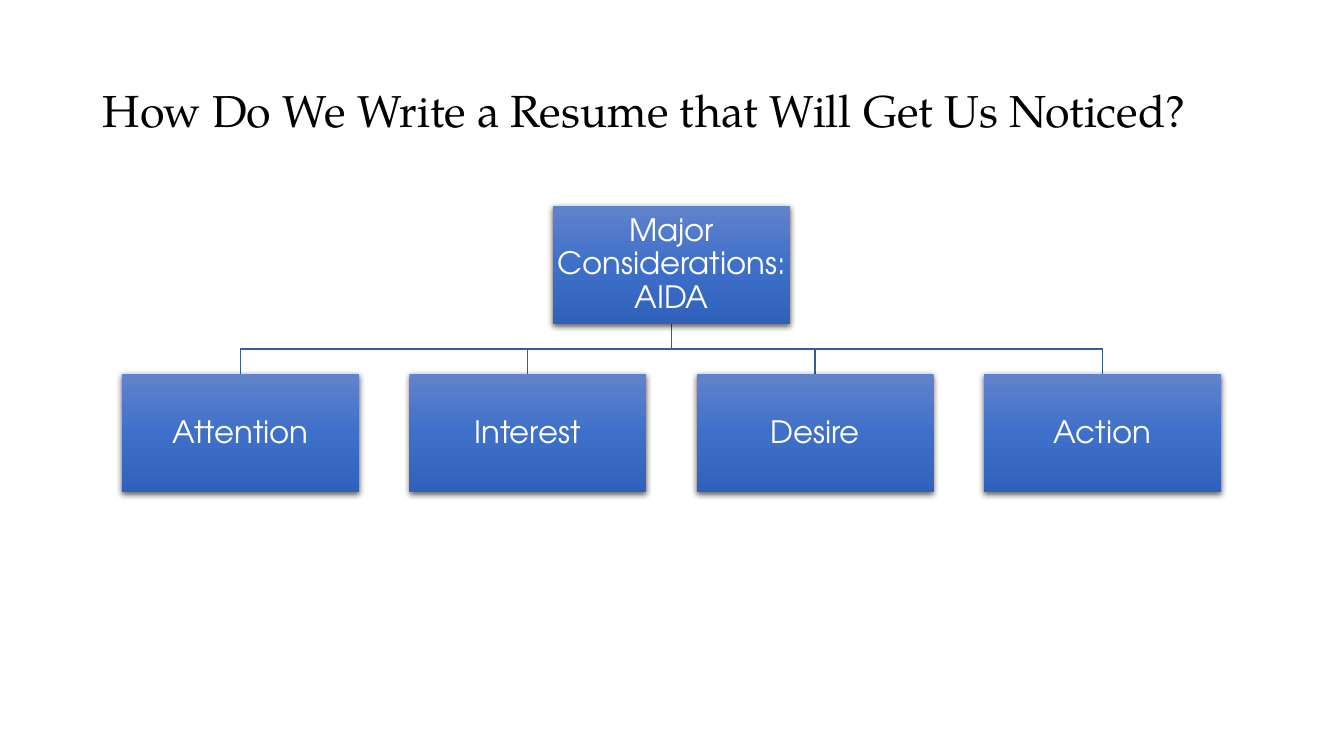
from lxml import etree
from pptx import Presentation
from pptx.dml.color import RGBColor
from pptx.enum.shapes import MSO_SHAPE
from pptx.enum.text import MSO_ANCHOR, MSO_AUTO_SIZE, PP_ALIGN
from pptx.oxml.ns import qn
from pptx.util import Inches, Pt

RECTANGLE = MSO_SHAPE.RECTANGLE
MIDDLE = MSO_ANCHOR.MIDDLE
NO_AUTOFIT = MSO_AUTO_SIZE.NONE
LEFT, CENTER = PP_ALIGN.LEFT, PP_ALIGN.CENTER

BLACK = RGBColor(0x00, 0x00, 0x00)
WHITE = RGBColor(0xFF, 0xFF, 0xFF)
BRANCH_BLUE = RGBColor(0x36, 0x5B, 0x9D)
BOX_BLUES = (
    (0, RGBColor(0x61, 0x83, 0xCB)),
    (50, RGBColor(0x3E, 0x70, 0xCA)),
    (100, RGBColor(0x30, 0x62, 0xBB)),
)

SLIDE_WIDTH, SLIDE_HEIGHT = Inches(13.33), Inches(7.5)
BOX_WIDTH = Inches(2.35)
BOX_HEIGHT = BOX_WIDTH // 2
CHART_LEFT, CHART_TOP = Inches(1.21), Inches(2.04)
COLUMN_STEP, ROW_STEP = Inches(2.85), Inches(1.67)

STEPS = ("Attention", "Interest", "Desire", "Action")
HEADING_COLUMN = (len(STEPS) - 1) / 2


def write_text(shape, text, *, font, size, color, align, inset, space_after=0):
    frame = shape.text_frame
    frame.text = text
    frame.word_wrap = True
    frame.auto_size = NO_AUTOFIT
    frame.vertical_anchor = MIDDLE
    frame.margin_left = frame.margin_right = Inches(inset[0])
    frame.margin_top = frame.margin_bottom = Inches(inset[1])
    paragraph = frame.paragraphs[0]
    paragraph.alignment = align
    paragraph.line_spacing = 0.9
    paragraph.space_before = Pt(0)
    paragraph.space_after = Pt(space_after)
    run_font = paragraph.runs[0].font
    run_font.name = font
    run_font.size = Pt(size)
    run_font.color.rgb = color


def add_title(slide, text):
    title = slide.shapes.title
    title.left, title.top = Inches(0.92), Inches(0.4)
    title.width, title.height = Inches(11.5), Inches(1.45)
    write_text(title, text, font="TeX Gyre Pagella", size=32, color=BLACK,
               align=LEFT, inset=(0.1, 0.05))


def fill_gradient(shape):
    shape.fill.gradient()
    shape.fill.gradient_angle = 270
    stop_list = shape._element.spPr.find(qn("a:gradFill")).find(qn("a:gsLst"))
    for stop in list(stop_list):
        stop_list.remove(stop)
    for percent, color in BOX_BLUES:
        stop = etree.SubElement(stop_list, qn("a:gs"), pos=str(percent * 1000))
        etree.SubElement(stop, qn("a:srgbClr"), val=str(color))


def cast_shadow(shape):
    shape.shadow.inherit = False
    effects = shape._element.spPr.find(qn("a:effectLst"))
    shadow = etree.SubElement(effects, qn("a:outerShdw"), blurRad=str(Pt(4.5)),
                              dist=str(Pt(1.5)), dir="5400000",
                              algn="ctr", rotWithShape="0")
    color = etree.SubElement(shadow, qn("a:srgbClr"), val=str(BLACK))
    etree.SubElement(color, qn("a:alpha"), val="63000")


def box_corner(column, row):
    return CHART_LEFT + int(column * COLUMN_STEP), CHART_TOP + row * ROW_STEP


def add_box(slide, text, column, row):
    box = slide.shapes.add_shape(RECTANGLE, *box_corner(column, row),
                                 BOX_WIDTH, BOX_HEIGHT)
    fill_gradient(box)
    box.line.fill.background()
    cast_shadow(box)
    write_text(box, text, font="TeX Gyre Adventor", size=22, color=WHITE,
               align=CENTER, inset=(0.02, 0.02), space_after=7.7)


def add_branch(slide, column):
    heading_left, heading_top = box_corner(HEADING_COLUMN, 0)
    step_left, step_top = box_corner(column, 1)
    heading_x = heading_left + BOX_WIDTH // 2
    step_x = step_left + BOX_WIDTH // 2
    heading_bottom = heading_top + BOX_HEIGHT
    bend_y = (heading_bottom + step_top) // 2
    outline = slide.shapes.build_freeform(heading_x, heading_bottom)
    outline.add_line_segments(
        [(heading_x, bend_y), (step_x, bend_y), (step_x, step_top)],
        close=False)
    branch = outline.convert_to_shape()
    branch.fill.background()
    branch.line.color.rgb = BRANCH_BLUE
    branch.line.width = Pt(1)
    branch.shadow.inherit = False


def main():
    presentation = Presentation()
    presentation.slide_width = SLIDE_WIDTH
    presentation.slide_height = SLIDE_HEIGHT
    slide = presentation.slides.add_slide(presentation.slide_layouts[5])
    add_title(slide, "How Do We Write a Resume that Will Get Us Noticed?")
    for column in reversed(range(len(STEPS))):
        add_branch(slide, column)
    add_box(slide, "Major Considerations: AIDA", HEADING_COLUMN, 0)
    for column, step in enumerate(STEPS):
        add_box(slide, step, column, 1)
    presentation.save("out.pptx")


if __name__ == "__main__":
    main()
